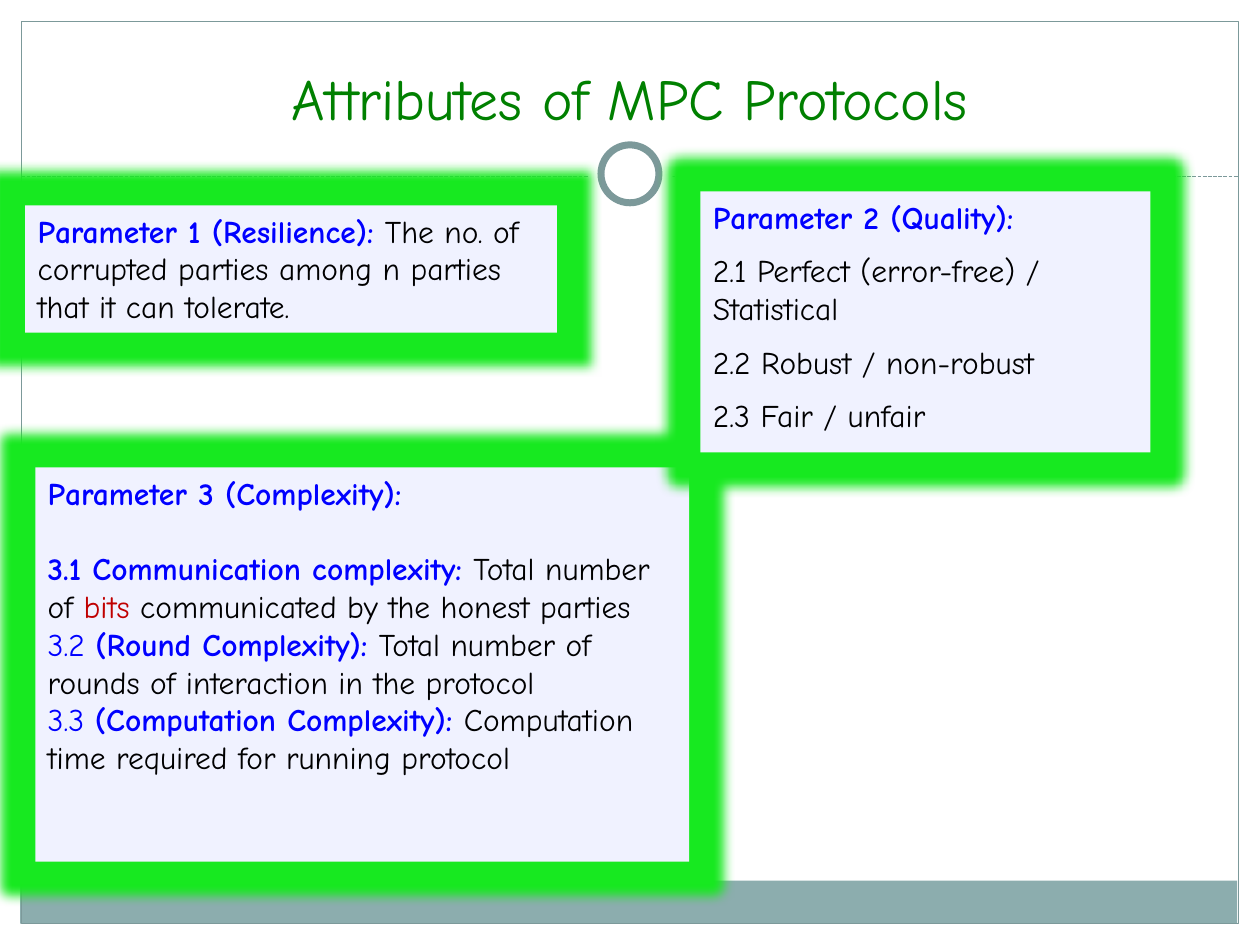
from lxml import etree
from pptx import Presentation
from pptx import util as u
from pptx.dml import color
from pptx.enum import dml, shapes, text
from pptx.oxml import ns

Inches, Pt = u.Inches, u.Pt
FONT = "Comic Neue"
HUES = {"white": "FFFFFF", "teal": "8CADAE", "edge": "7C999A", "title": "008000",
        "panel": "F0F2FF", "glow": "17E920", "blue": "0000FF", "black": "000000",
        "red": "C00000"}


def rgb(name):
    return color.RGBColor.from_string(HUES[name])


def draw(kind, box, fill=None, line=None, width=0.75):
    shape = slide.shapes.add_shape(kind, *map(Inches, box))
    shape.shadow.inherit = False
    if fill:
        shape.fill.solid()
        shape.fill.fore_color.rgb = rgb(fill)
    else:
        shape.fill.background()
    if line:
        shape.line.color.rgb = rgb(line)
        shape.line.width = Pt(width)
    else:
        shape.line.fill.background()
    return shape


deck = Presentation()
deck.slide_width, deck.slide_height = Inches(10), Inches(7.5)
slide = deck.slides.add_slide(deck.slide_layouts[6])
RECT, OVAL = shapes.MSO_SHAPE.RECTANGLE, shapes.MSO_SHAPE.OVAL

for box in [(0, 0, 10, 1.52), (0, 0, 0.17, 7.5), (9.83, 0, 0.17, 7.5)]:
    draw(RECT, box, "white")
draw(RECT, (0.16, 6.99, 9.66, 0.34), "teal")
draw(RECT, (0.17, 0.17, 9.66, 7.16), line="edge")

rule = slide.shapes.add_connector(shapes.MSO_CONNECTOR.STRAIGHT, Inches(0.17),
                                  Inches(1.4), Inches(9.83), Inches(1.4))
rule.line.color.rgb = rgb("edge")
rule.line.width = Pt(0.75)
rule.line.dash_style = dml.MSO_LINE.SQUARE_DOT
etree.SubElement(rule._element.spPr, ns.qn("a:effectLst"))

draw(OVAL, (4.67, 1.05, 0.67, 0.67), "white")
draw(OVAL, (4.77, 1.15, 0.46, 0.46), "white", "edge", 4)

title = slide.shapes.add_textbox(Inches(0.69), Inches(0.18), Inches(8.62), Inches(0.92))
frame = title.text_frame
frame.word_wrap = True
frame.vertical_anchor = text.MSO_ANCHOR.BOTTOM
para = frame.paragraphs[0]
para.text = "Attributes of MPC Protocols"
para.alignment = text.PP_ALIGN.CENTER
para.font.name, para.font.size = FONT, Pt(33)
para.font.color.rgb = rgb("title")

PANELS = [
    ((0.2, 1.63, 4.22, 1.01), [
        (0, [("Parameter 1 (Resilience): ", "blue", True),
             ("The no. of corrupted parties among n parties that it can tolerate.",
              "black", False)]),
    ]),
    ((0.28, 3.71, 5.19, 3.13), [
        (0, [("Parameter 3 (Complexity):", "blue", True)]),
        (21.6, [("3.1 Communication complexity: ", "blue", True),
                ("Total number of ", "black", False),
                ("bits ", "red", False),
                ("communicated by the honest parties", "black", False)]),
        (0, [("3.2 ", "blue", False),
             ("(Round Complexity): ", "blue", True),
             ("Total number of rounds of interaction in the protocol", "black", False)]),
        (0, [("3.3 ", "blue", False),
             ("(Computation Complexity): ", "blue", True),
             ("Computation time required for running protocol", "black", False)]),
    ]),
    ((5.56, 1.52, 3.57, 2.07), [
        (0, [("Parameter 2 (Quality):", "blue", True)]),
        (9, [("2.1 Perfect (error-free) / Statistical", "black", False)]),
        (9, [("2.2 Robust / non-robust", "black", False)]),
        (9, [("2.3 Fair / unfair", "black", False)]),
    ]),
]

for box, paras in PANELS:
    panel = draw(RECT, box, "panel")
    effects = panel._element.spPr.find(ns.qn("a:effectLst"))
    glow = etree.SubElement(effects, ns.qn("a:glow"), rad=str(Inches(0.18)))
    etree.SubElement(glow, ns.qn("a:srgbClr"), val=HUES["glow"])
    frame = panel.text_frame
    frame.word_wrap = True
    frame.vertical_anchor = text.MSO_ANCHOR.TOP
    for i, (gap, runs) in enumerate(paras):
        para = frame.add_paragraph() if i else frame.paragraphs[0]
        para.alignment = text.PP_ALIGN.LEFT
        para.space_before = Pt(gap)
        para.font.name, para.font.size = FONT, Pt(18)
        for words, hue, bold in runs:
            run = para.add_run()
            run.text = words
            run.font.bold = bold
            run.font.color.rgb = rgb(hue)

deck.save("out.pptx")
